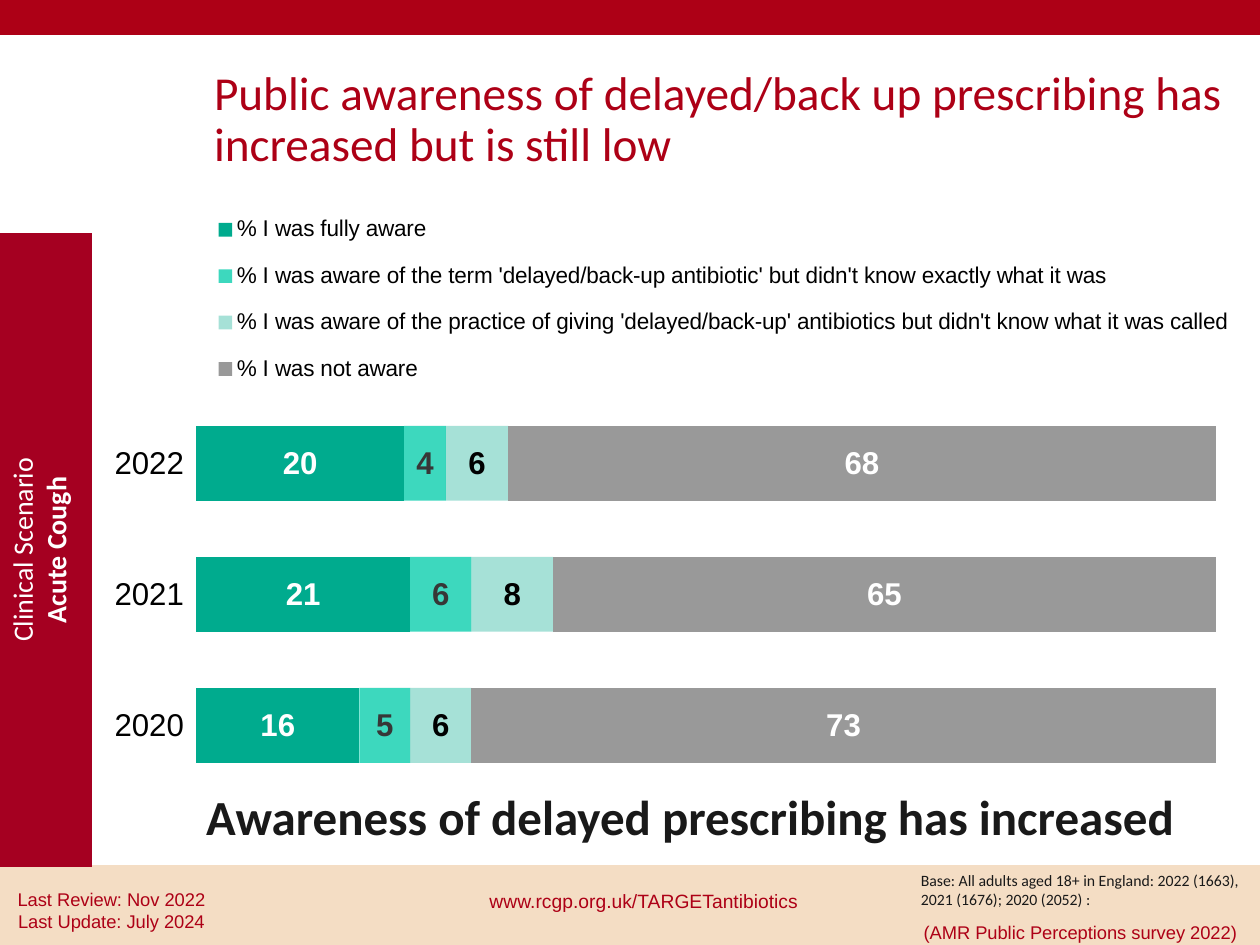
from lxml.etree import SubElement
from pptx import Presentation
from pptx.chart.data import CategoryChartData
from pptx.dml.color import RGBColor
from pptx.enum.chart import XL_CHART_TYPE as CHART, XL_LEGEND_POSITION as LEGEND
from pptx.enum.chart import XL_TICK_MARK as TICK
from pptx.enum.shapes import MSO_SHAPE as SHAPE
from pptx.enum.text import MSO_ANCHOR as ANCHOR, PP_ALIGN as ALIGN
from pptx.oxml import parse_xml
from pptx.oxml.ns import nsdecls, qn
from pptx.util import Inches, Pt

COLORS = {
    "red": "AD0016", "side": "A50021", "sand": "F4DDC4", "ink": "191919",
    "white": "FFFFFF", "black": "000000", "charcoal": "373737",
    "green": "00AB8E", "mint": "00CCAA", "gray": "999999",
}


def style(font, size, color, name="Calibri", bold=False):
    font.size, font.name, font.bold = Pt(size), name, bold
    font.color.rgb = RGBColor.from_string(COLORS[color])


def write(frame, text, size, color, name="Calibri", align=ALIGN.LEFT, bold=False):
    frame.word_wrap = True
    frame.text = text
    for paragraph in frame.paragraphs:
        paragraph.alignment = align
        for run in paragraph.runs:
            style(run.font, size, color, name, bold)


prs = Presentation()
prs.slide_width, prs.slide_height = Inches(10), Inches(7.5)
slide = prs.slides.add_slide(prs.slide_layouts[6])
shapes = slide.shapes

# Footer, top band and side tab
for box, color in [
    ((0, 6.87, 10, 0.62), "sand"),
    ((0, -0.01, 10, 0.28), "red"),
    ((-0.01, 1.85, 0.74, 5.03), "side"),
]:
    band = shapes.add_shape(SHAPE.RECTANGLE, *map(Inches, box))
    band.shadow.inherit = False
    band.fill.solid()
    band.fill.fore_color.rgb = RGBColor.from_string(COLORS[color])
    if color == "side":
        band.line.fill.background()
    else:
        band.line.color.rgb = RGBColor.from_string(COLORS[color])
        band.line.width = Pt(1)

side_tab = band.text_frame
write(side_tab, "Clinical Scenario\nAcute Cough", 16, "white", align=ALIGN.CENTER)
side_tab.paragraphs[1].runs[0].font.bold = True
side_tab.vertical_anchor = ANCHOR.TOP
side_tab._txBody.bodyPr.set("vert", "vert270")

# Awareness chart
YEARS = ["2022", "2021", "2020"]
ANSWERS = [  # name, values, fill, opacity in %, label colour
    ("% I was fully aware", (20, 21, 16), "green", 100, "white"),
    ("% I was aware of the term 'delayed/back-up antibiotic' but didn't know "
     "exactly what it was", (4, 6, 5), "mint", 76, "charcoal"),
    ("% I was aware of the practice of giving 'delayed/back-up' antibiotics but "
     "didn't know what it was called", (6, 8, 6), "green", 35, "black"),
    ("% I was not aware", (68, 65, 73), "gray", 100, "white"),
]
data = CategoryChartData()
data.categories = YEARS
for name, values, *_ in ANSWERS:
    data.add_series(name, values)
chart = shapes.add_chart(
    CHART.BAR_STACKED_100, *map(Inches, (0.57, 1.4, 9.32, 5.14)), data).chart
style(chart.font, 18, "red")
chart.has_title = False

plot = chart.plots[0]
plot.gap_width, plot.overlap, plot.vary_by_categories = 75, 100, False
for series, (_, _, fill, opacity, label) in zip(plot.series, ANSWERS):
    series.format.fill.solid()
    series.format.fill.fore_color.rgb = RGBColor.from_string(COLORS[fill])
    if opacity < 100:
        color_xml = series._element.find(".//" + qn("a:srgbClr"))
        SubElement(color_xml, qn("a:alpha"), val=str(opacity * 1000))
    series.data_labels.show_value = True
    style(series.data_labels.font, 18, label, "Arial", True)

years_axis = chart.category_axis
years_axis.reverse_order = True
years_axis.major_tick_mark = TICK.OUTSIDE
years_axis.format.line.fill.background()
style(years_axis.tick_labels.font, 18, "black", "Arial")
chart.value_axis.has_major_gridlines = False
chart.value_axis.visible = False

chart.has_legend = True
legend = chart.legend
legend.position = LEGEND.TOP
legend.include_in_layout = False
style(legend.font, 13, "black", "Arial")

# Fixed places of the bars and the legend, as shares of the chart
for owner, target, place in [
    (chart._chartSpace.chart.plotArea, "inner", (0.107, 0.342, 0.877, 0.607)),
    (legend._element, None, (0.12, 0.03, 0.88, 0.32)),
]:
    for old in owner.findall(qn("c:layout")):
        owner.remove(old)
    parts = f'<c:layoutTarget val="{target}"/>' if target else ""
    parts += '<c:xMode val="edge"/><c:yMode val="edge"/>'
    parts += "".join(f'<c:{key} val="{share}"/>' for key, share in zip("xywh", place))
    layout = parse_xml(f'<c:layout {nsdecls("c")}><c:manualLayout>{parts}'
                       "</c:manualLayout></c:layout>")
    if target:
        owner.insert(0, layout)
    else:
        owner.find(qn("c:legendPos")).addnext(layout)

# Title, message and footer texts
title = shapes.add_textbox(*map(Inches, (1.6, 0.44, 8.39, 1.03))).text_frame
write(title, "Public awareness of delayed/back up prescribing has increased "
             "but is still low", 27, "red")
title.vertical_anchor = ANCHOR.MIDDLE
title.paragraphs[0].line_spacing = 0.9

for box, text, size, color, font, align, bold in [
    ((1.07, 6.19, 8.81, 0.57), "Awareness of delayed prescribing has increased",
     28, "ink", "Calibri", ALIGN.CENTER, True),
    ((3.42, 6.95, 3.38, 0.4), "www.rcgp.org.uk/TARGETantibiotics",
     11, "red", "Arial", ALIGN.CENTER, False),
    ((-0.11, 7, 1.99, 0.4), "Last Review: Nov 2022\nLast Update: July 2024",
     10.5, "red", "Arial", ALIGN.CENTER, False),
    ((7.21, 6.86, 2.79, 0.4), "Base: All adults aged 18+ in England: 2022 (1663), "
     "2021 (1676); 2020 (2052) :", 9, "ink", "Calibri", ALIGN.LEFT, False),
    ((6, 7.27, 3.89, 0.25), "(AMR Public Perceptions survey 2022)",
     10.5, "red", "Arial", ALIGN.RIGHT, False),
]:
    note = shapes.add_textbox(*map(Inches, box)).text_frame
    write(note, text, size, color, font, align, bold)
    if text.startswith("www"):
        note.vertical_anchor = ANCHOR.MIDDLE
    if align == ALIGN.RIGHT:
        note.margin_left = note.margin_right = Inches(0.07)
        note.margin_top = note.margin_bottom = Inches(0.04)

prs.save("out.pptx")
